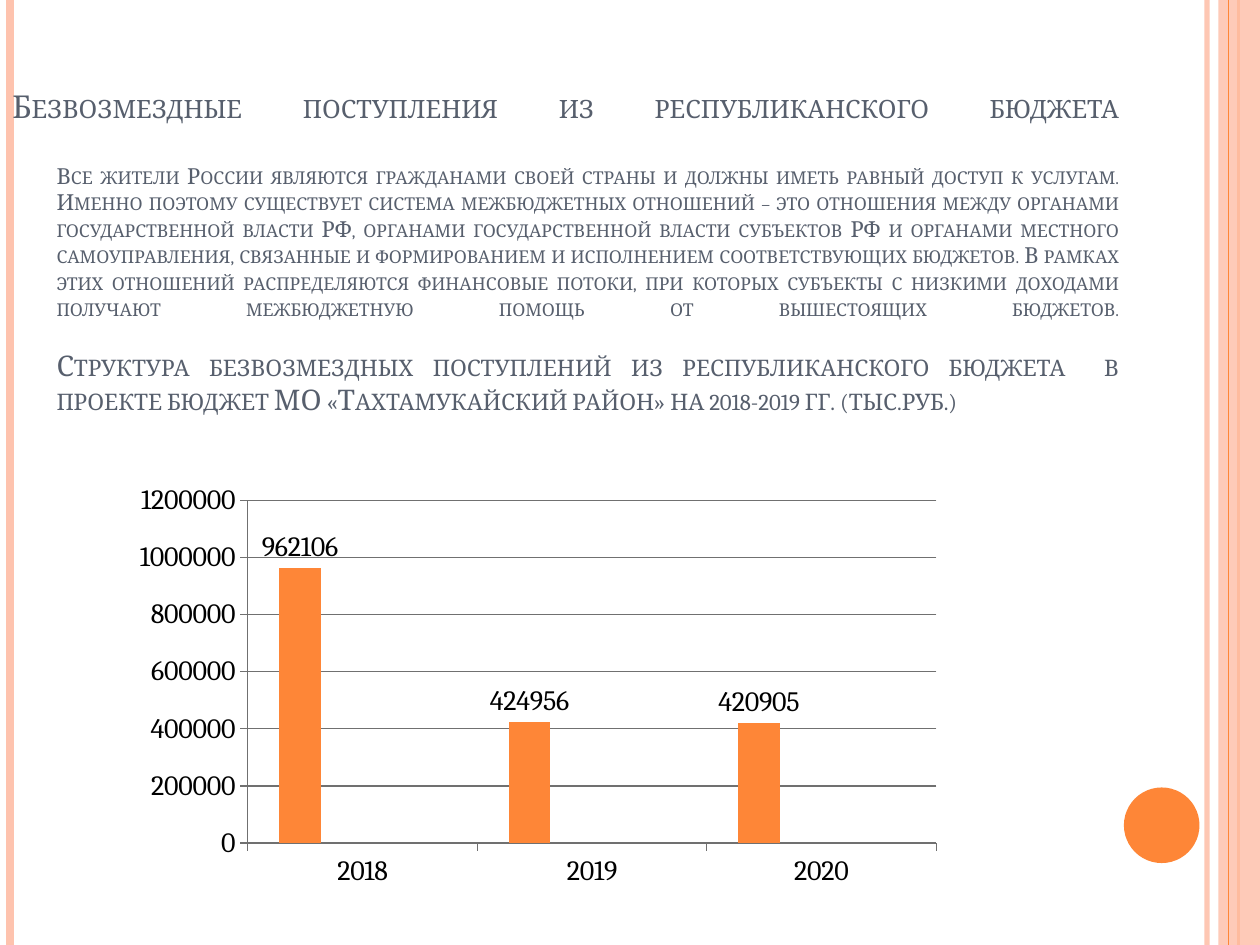
from copy import deepcopy

from lxml import etree
from pptx import Presentation
from pptx.chart.data import CategoryChartData
from pptx.dml.color import RGBColor
from pptx.enum.chart import XL_CHART_TYPE, XL_LABEL_POSITION, XL_TICK_MARK
from pptx.enum.shapes import MSO_CONNECTOR, MSO_SHAPE
from pptx.enum.text import MSO_ANCHOR, PP_ALIGN
from pptx.oxml import parse_xml
from pptx.oxml.ns import nsdecls, qn
from pptx.util import Inches, Pt

COLUMNS = XL_CHART_TYPE.COLUMN_CLUSTERED
OUTSIDE_END = XL_LABEL_POSITION.OUTSIDE_END
TICK_OUT = XL_TICK_MARK.OUTSIDE
STRAIGHT = MSO_CONNECTOR.STRAIGHT
RECTANGLE, OVAL = MSO_SHAPE.RECTANGLE, MSO_SHAPE.OVAL
BOTTOM, JUSTIFY = MSO_ANCHOR.BOTTOM, PP_ALIGN.JUSTIFY

ORANGE = RGBColor(0xFE, 0x86, 0x37)
PEACH = RGBColor(0xFE, 0xC3, 0xAE)
SLATE = RGBColor(0x57, 0x5F, 0x6D)
BLACK = RGBColor(0, 0, 0)
GREY = RGBColor(0x70, 0x70, 0x70)
BLUE = RGBColor(0x75, 0x98, 0xD9)
RED = RGBColor(0xB3, 0x2C, 0x16)
YELLOW = RGBColor(0xF5, 0xCD, 0x2D)

FONT = "Cambria"
WIDTH, HEIGHT = 10, 7.5

HEADING = "Безвозмездные поступления из республиканского бюджета"
BODY = (
    "Все жители России являются гражданами своей страны и должны иметь равный "
    "доступ к услугам. Именно поэтому существует система межбюджетных отношений – "
    "это отношения между органами государственной власти РФ, органами "
    "государственной власти субъектов РФ и органами местного самоуправления, "
    "связанные и формированием и исполнением соответствующих бюджетов. В рамках "
    "этих отношений распределяются финансовые потоки, при которых субъекты с "
    "низкими доходами получают межбюджетную помощь от вышестоящих бюджетов."
)
CAPTION = (
    "Структура безвозмездных поступлений из республиканского бюджета  в проекте "
    "бюджет МО «Тахтамукайский район» на 2018-2019 гг. (тыс.руб.)"
)

YEARS = ["2018", "2019", "2020"]
SERIES = [
    ("Series 1", [962106, 424956, 420905], ORANGE),
    ("Series 2", [None] * 3, BLUE),
    ("Series 3", [None] * 3, RED),
    ("Series 4", [None] * 3, YELLOW),
]
PLOT_AREA = {"x": 0.114, "y": 0.179, "w": 0.631, "h": 0.705}


def set_opacity(fill, percent):
    color = fill._xPr.find(".//" + qn("a:srgbClr"))
    etree.SubElement(color, qn("a:alpha")).set("val", str(percent * 1000))


def add_stripe(s, x, color, width, opacity=100):
    """Draw a vertical line over the full slide height."""
    line = s.shapes.add_connector(STRAIGHT, Inches(x), 0, Inches(x), Inches(HEIGHT))
    line.line.color.rgb = color
    line.line.width = Pt(width)
    if opacity < 100:
        set_opacity(line.line.fill, opacity)
    etree.SubElement(line._element.spPr, qn("a:effectLst"))


def add_solid(s, kind, left, top, width, height, color, opacity=100):
    sp = s.shapes.add_shape(
        kind, Inches(left), Inches(top), Inches(width), Inches(height))
    sp.shadow.inherit = False
    sp.fill.solid()
    sp.fill.fore_color.rgb = color
    sp.line.fill.background()
    if opacity < 100:
        set_opacity(sp.fill, opacity)


def add_decoration(s):
    add_stripe(s, 9.58, PEACH, 3, opacity=93)
    add_stripe(s, 0.08, PEACH, 4.5)
    add_stripe(s, 9.83, ORANGE, 1.5)
    add_solid(s, RECTANGLE, 9.67, 0, WIDTH - 9.67, HEIGHT, PEACH, opacity=87)
    add_stripe(s, 9.75, ORANGE, 0.75)
    add_solid(s, OVAL, 8.92, 6.25, 0.6, 0.6, ORANGE)


def add_text(p, text, size, color=SLATE, breaks=0):
    """Add a small-caps run, then line breaks of the same size."""
    r = p.add_run()
    r.text = text
    r.font.name = FONT
    r.font.size = Pt(size)
    r.font.color.rgb = color
    props = r.font._element
    props.set("cap", "small")
    for _ in range(breaks):
        p.add_line_break()
        p._p[-1].append(deepcopy(props))


def add_title(s, left, top, width, height):
    """Place the text in one paragraph, so lines before a break are justified."""
    sp = s.shapes.add_textbox(
        Inches(left), Inches(top), Inches(width), Inches(height))
    tf = sp.text_frame
    tf.word_wrap = True
    tf.vertical_anchor = BOTTOM
    p = tf.paragraphs[0]
    p.alignment = JUSTIFY
    indent = Inches(0.35)
    p_props = p._p.get_or_add_pPr()
    p_props.set("marL", str(indent))
    p_props.set("indent", str(-indent))
    add_text(p, HEADING, 18, breaks=2)
    add_text(p, BODY, 12.6, breaks=2)
    add_text(p, CAPTION, 16.2)


def set_plot_area(chart):
    places = "".join(
        f'<c:{key}Mode val="edge"/>' for key in "xy"
    ) + "".join(f'<c:{key} val="{val}"/>' for key, val in PLOT_AREA.items())
    layout = parse_xml(
        f'<c:layout {nsdecls("c")}><c:manualLayout>'
        f'<c:layoutTarget val="inner"/>{places}</c:manualLayout></c:layout>')
    plot_area = chart._chartSpace.chart.plotArea
    for old in plot_area.findall(qn("c:layout")):
        plot_area.remove(old)
    plot_area.insert(0, layout)


def add_budget_chart(s, left, top, width, height):
    data = CategoryChartData()
    data.categories = YEARS
    for name, values, _ in SERIES:
        data.add_series(name, values)
    chart = s.shapes.add_chart(
        COLUMNS, Inches(left), Inches(top), Inches(width), Inches(height), data).chart
    chart.has_legend = False
    chart.has_title = False
    chart.font.name = FONT
    chart.font.size = Pt(16)
    chart.font.color.rgb = BLACK

    plot = chart.plots[0]
    plot.gap_width = 150
    plot.overlap = 0
    plot.vary_by_categories = False
    for series, (_, _, color) in zip(plot.series, SERIES):
        series.format.fill.solid()
        series.format.fill.fore_color.rgb = color
    labels = plot.series[0].data_labels
    labels.show_value = True
    labels.position = OUTSIDE_END

    for axis in (chart.category_axis, chart.value_axis):
        axis.major_tick_mark = TICK_OUT
        axis.format.line.color.rgb = GREY
    axis = chart.value_axis
    axis.minimum_scale, axis.maximum_scale, axis.major_unit = 0, 1200000, 200000
    axis.has_major_gridlines = True
    axis.major_gridlines.format.line.color.rgb = GREY
    set_plot_area(chart)


def main():
    prs = Presentation()
    prs.slide_width, prs.slide_height = Inches(WIDTH), Inches(HEIGHT)
    s = prs.slides.add_slide(prs.slide_layouts[6])
    add_decoration(s)
    add_title(s, 0, 2.81, 8.98, 0.54)
    add_budget_chart(s, 0.98, 3.28, 8.66, 3.86)
    prs.save("out.pptx")


if __name__ == "__main__":
    main()
